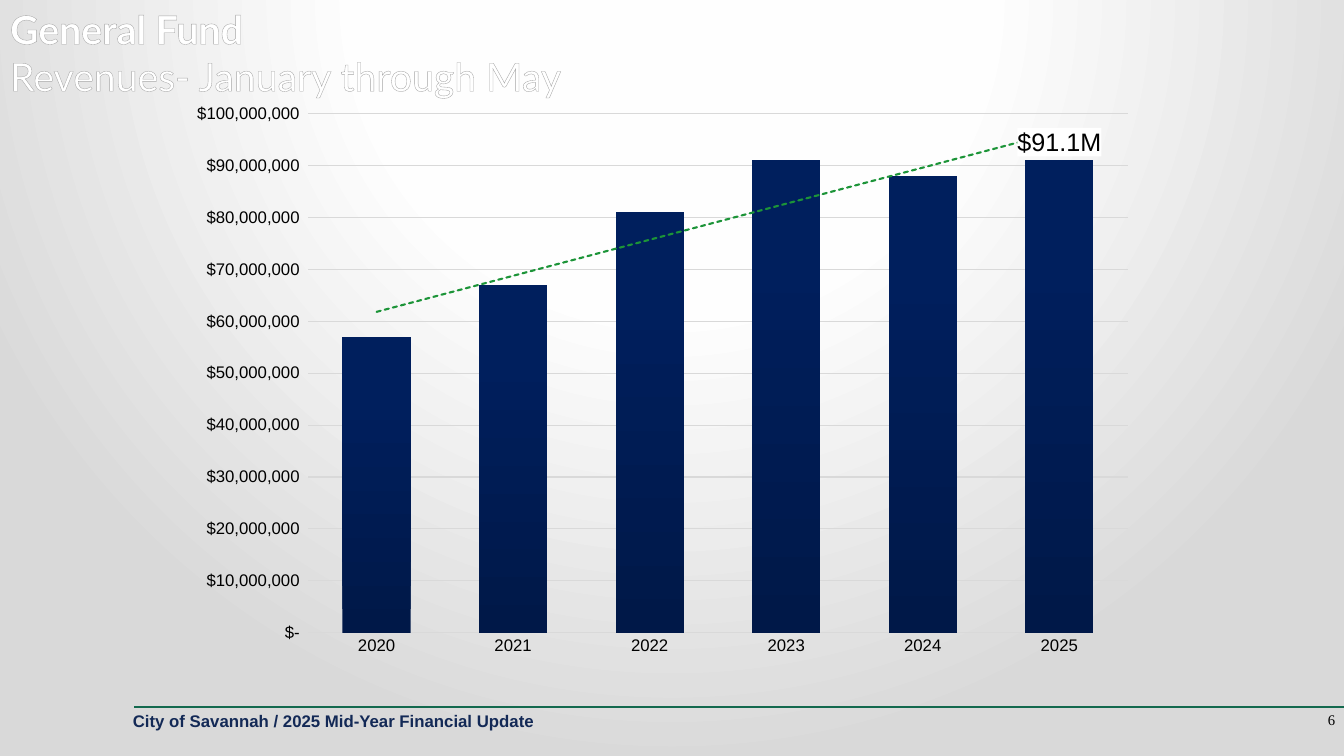
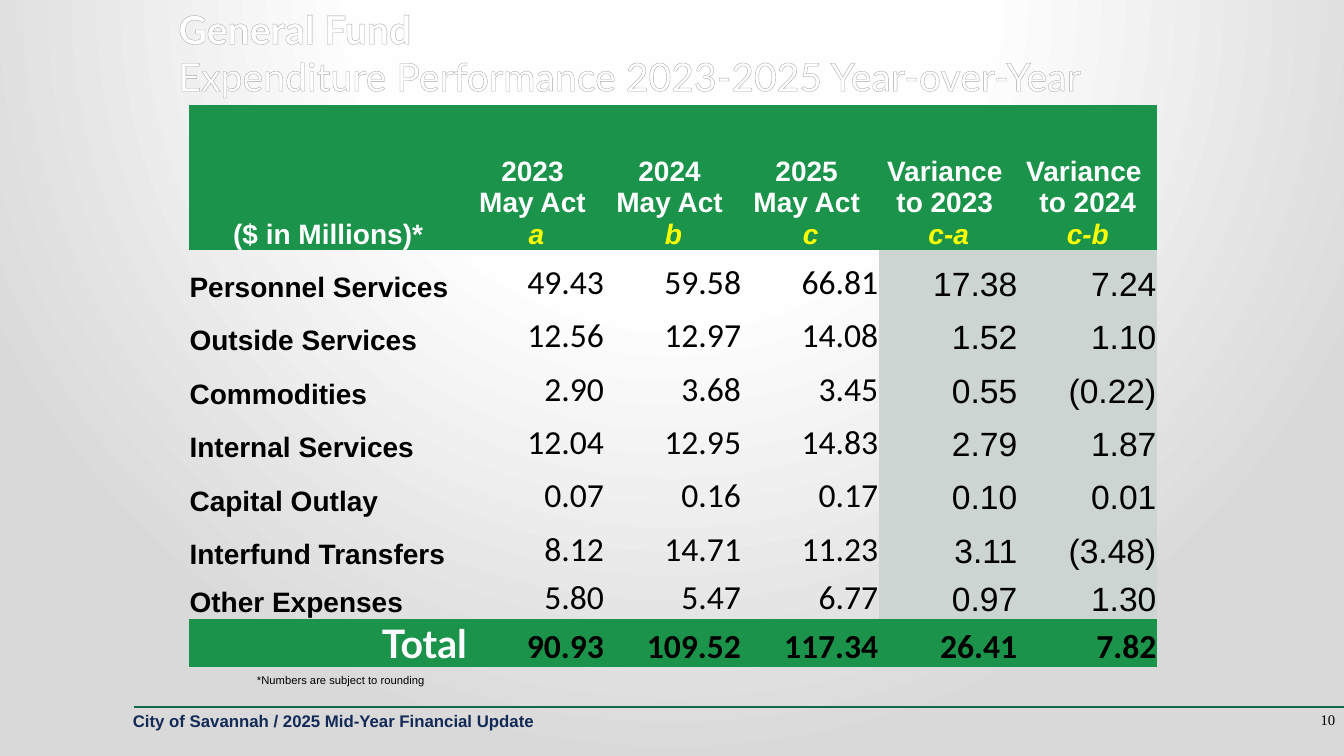
from pptx import Presentation
from pptx.chart.data import CategoryChartData
from pptx.dml.color import RGBColor
from pptx.enum.chart import XL_CHART_TYPE, XL_LABEL_POSITION, XL_TICK_MARK
from pptx.enum.shapes import MSO_CONNECTOR
from pptx.enum.text import MSO_ANCHOR, MSO_AUTO_SIZE, PP_ALIGN
from pptx.oxml import parse_xml
from pptx.oxml.ns import nsdecls, qn
from pptx.util import Inches, Pt

LEFT, MID, RIGHT = PP_ALIGN.LEFT, PP_ALIGN.CENTER, PP_ALIGN.RIGHT
TOP, LOW = MSO_ANCHOR.TOP, MSO_ANCHOR.BOTTOM
COLUMN = XL_CHART_TYPE.COLUMN_CLUSTERED
ABOVE = XL_LABEL_POSITION.OUTSIDE_END
NO_TICK = XL_TICK_MARK.NONE
NO_FIT = MSO_AUTO_SIZE.NONE
STRAIGHT = MSO_CONNECTOR.STRAIGHT

BLACK, WHITE, GRID = "000000", "FFFFFF", "D9D9D9"
GREEN, MIST, PINE, NAVY = "1B934B", "CCD5D1", "13694E", "132956"
NO_STYLE = "{2D5ABB26-0587-4C30-8999-92F81FD0307C}"
MONEY = '_("$"* #,##0_);_("$"* \\(#,##0\\);_("$"* "-"_);_(@_)'

TITLE = {"size": 28, "name": "Lato", "color": WHITE, "bold": True}
FOOTER = {"size": 12, "name": "Arial", "color": NAVY, "bold": True}
NUMBER = {"size": 10.5, "name": "Times New Roman", "color": BLACK}
NOTE = {"size": 8, "name": "Arial", "color": BLACK}
AXIS = {"size": 12, "name": "Arial", "color": BLACK, "bold": False}
TAG = {**AXIS, "size": 18}
HEAD = {"size": 20, "name": "Arial", "color": WHITE, "bold": True}
KEY = {**HEAD, "color": "FFFF00", "italic": True}
LABEL = {**HEAD, "color": BLACK}
ACTUAL = {"size": 24, "name": "Calibri", "color": BLACK, "bold": False}
CHANGE = {**ACTUAL, "name": "Arial"}
SUM = {**ACTUAL, "bold": True}

YEARS = ["2020", "2021", "2022", "2023", "2024", "2025"]
FUNDS = [57_000_000, 67_000_000, 81_000_000, 91_000_000, 88_000_000, 91_000_000]
WIDTHS = [2.77] + [1.36] * 3 + [1.38] * 2
HEIGHTS = [1.44] + [0.53] * 6 + [0.48] * 2
HEADS = [
    ["($ in Millions)*"],
    ["2023 ", "May Act ", "a"],
    ["2024 ", "May Act ", "b"],
    ["2025 ", "May Act ", "c"],
    ["Variance ", "to 2023 ", "c-a"],
    ["Variance ", "to 2024", "c-b"],
]
COSTS = [
    ["Personnel Services", "49.43", "59.58", "66.81", "17.38", "7.24"],
    ["Outside Services", "12.56", "12.97", "14.08", "1.52", "1.10"],
    ["Commodities", "2.90", "3.68", "3.45", "0.55", "(0.22)"],
    ["Internal Services", "12.04", "12.95", "14.83", "2.79", "1.87"],
    ["Capital Outlay", "0.07", "0.16", "0.17", "0.10", "0.01"],
    ["Interfund Transfers", "8.12", "14.71", "11.23", "3.11", "(3.48)"],
    ["Other Expenses", "5.80", "5.47", "6.77", "0.97", "1.30"],
]
TOTAL = ["Total", "90.93", "109.52", "117.34", "26.41", "7.82"]


def tint(text):
    return RGBColor.from_string(text)


def box(*sizes):
    return [Inches(size) for size in sizes]


def style(font, form):
    for key, value in form.items():
        if key == "color":
            font.color.rgb = tint(value)
        else:
            setattr(font, key, Pt(value) if key == "size" else value)


def write(para, lines, align=LEFT):
    para.alignment = align
    for spot, (text, form) in enumerate(lines):
        if spot:
            para.add_line_break()
        run = para.add_run()
        run.text = text
        style(run.font, form)


def blend(fill, root, stops, tail):
    fill.solid()
    marks = "".join(
        f'<a:gs pos="{spot * 1000}"><a:srgbClr val="{color}"/></a:gs>'
        for spot, color in stops
    )
    old = root.find(".//" + qn("a:solidFill"))
    new = parse_xml(
        f'<a:gradFill {nsdecls("a")} rotWithShape="1">'
        f"<a:gsLst>{marks}</a:gsLst>{tail}</a:gradFill>"
    )
    old.getparent().replace(old, new)


def add_text(slide, place, text, form, align=LEFT):
    shape = slide.shapes.add_textbox(*box(*place))
    shape.text_frame.word_wrap = True
    write(shape.text_frame.paragraphs[0], [(text, form)], align)
    return shape


def add_rule(slide):
    rule = slide.shapes.add_connector(STRAIGHT, *box(1.33, 7.01, 13.33, 7.01))
    rule.line.color.rgb = tint(PINE)
    rule.line.width = Pt(1.5)
    rule.element.find(qn("p:spPr")).append(
        parse_xml(f'<a:effectLst {nsdecls("a")}/>')
    )
    return rule


def set_theme(deck, slide):
    master = deck.slide_master
    blend(
        master.background.fill,
        master.element.find(".//" + qn("p:bg")),
        [(0, WHITE), (40, "FEFEFE"), (100, GRID)],
        '<a:path path="circle"><a:fillToRect l="50000" t="-80000"'
        ' r="50000" b="180000"/></a:path>',
    )
    label = "City of Savannah / 2025 Mid-Year Financial Update"
    parts = [add_rule(slide), add_text(slide, (1.22, 7, 6.67, 0.5), label, FOOTER)]
    for code, part in enumerate(parts, 90):
        part.element.find(".//" + qn("p:cNvPr")).set("id", str(code))
        slide.slide_layout.element.cSld.spTree.append(part.element)


def set_title(slide, place, topic):
    title = slide.shapes.title
    title.left, title.top, title.width, title.height = box(*place)
    frame = title.text_frame
    frame.word_wrap = True
    frame.auto_size = NO_FIT
    frame.vertical_anchor = TOP
    lines = [("General Fund", TITLE), (topic, {**TITLE, "bold": False})]
    write(frame.paragraphs[0], lines)
    for props in title.element.iter(qn("a:rPr")):
        props.insert(0, parse_xml(
            f'<a:ln {nsdecls("a")} w="9525"><a:solidFill>'
            '<a:srgbClr val="A6A6A6"/></a:solidFill></a:ln>'
        ))


def add_page(slide, number):
    add_text(slide, (11.67, 7, 1.67, 0.5), number, NUMBER, RIGHT)


def set_axes(chart):
    for axis in (chart.category_axis, chart.value_axis):
        axis.major_tick_mark = axis.minor_tick_mark = NO_TICK
        style(axis.tick_labels.font, AXIS)
    value = chart.value_axis
    value.minimum_scale, value.maximum_scale = 0, 100_000_000
    value.major_unit = 10_000_000
    value.tick_labels.number_format = MONEY
    value.tick_labels.number_format_is_linked = False
    value.format.line.fill.background()
    for line in (value.major_gridlines.format.line, chart.category_axis.format.line):
        line.color.rgb = tint(GRID)
        line.width = Pt(0.75)


def set_plot(root):
    area = root.find(".//" + qn("c:plotArea"))
    for old in area.findall(qn("c:layout")):
        area.remove(old)
    spots = {"x": 0.117, "y": 0.024, "w": 0.85, "h": 0.904}
    modes = "".join(f'<c:{key}Mode val="edge"/>' for key in "xy")
    sizes = "".join(f'<c:{key} val="{size}"/>' for key, size in spots.items())
    area.insert(0, parse_xml(
        f'<c:layout {nsdecls("c")}><c:manualLayout>'
        f'<c:layoutTarget val="inner"/>{modes}{sizes}</c:manualLayout></c:layout>'
    ))


def add_trend(root):
    root.find(".//" + qn("c:ser")).find(qn("c:cat")).addprevious(parse_xml(
        f'<c:trendline {nsdecls("c", "a")}><c:spPr><a:ln w="19050" cap="rnd">'
        '<a:solidFill><a:srgbClr val="1C9438"/></a:solidFill>'
        '<a:prstDash val="sysDash"/></a:ln></c:spPr>'
        '<c:trendlineType val="linear"/><c:dispRSqr val="0"/>'
        '<c:dispEq val="0"/></c:trendline>'
    ))


def add_tag(series, root, spot, text):
    series.data_labels.show_value = False
    label = series.points[spot].data_label
    write(label.text_frame.paragraphs[0], [(text, TAG)], MID)
    label.position = ABOVE
    root.find(".//" + qn("c:dLbl")).find(qn("c:tx")).addnext(parse_xml(
        f'<c:spPr {nsdecls("c", "a")}><a:solidFill>'
        f'<a:srgbClr val="{WHITE}"/></a:solidFill></c:spPr>'
    ))


def add_bars(slide):
    data = CategoryChartData()
    data.categories = YEARS
    data.add_series("Series 1", FUNDS)
    chart = slide.shapes.add_chart(COLUMN, *box(1.91, 0.99, 9.59, 5.7), data).chart
    root = chart.element
    chart.has_legend = chart.has_title = False
    style(chart.font, {**AXIS, "size": 10})
    set_axes(chart)
    set_plot(root)
    plot = chart.plots[0]
    plot.gap_width, plot.overlap, plot.vary_by_categories = 100, -24, False
    series = plot.series[0]
    blend(
        series.format.fill,
        root.find(".//" + qn("c:ser")),
        [(0, "001848"), (80, "001F5D"), (100, "001F5D")],
        '<a:lin ang="16200000" scaled="0"/>',
    )
    add_tag(series, root, 5, "$91.1M")
    add_trend(root)


def set_cell(cell, lines, align, color=None):
    cell.margin_left = cell.margin_top = cell.margin_right = Inches(0.01)
    cell.margin_bottom = 0
    cell.vertical_anchor = LOW
    write(cell.text_frame.paragraphs[0], lines, align)
    if color:
        cell.fill.solid()
        cell.fill.fore_color.rgb = tint(color)
    else:
        cell.fill.background()


def add_costs(slide):
    frame = slide.shapes.add_table(
        len(HEIGHTS), len(WIDTHS), *box(1.87, 1.04, sum(WIDTHS), sum(HEIGHTS))
    )
    frame.element.find(".//" + qn("a:tableStyleId")).text = NO_STYLE
    table = frame.table
    table.first_row = table.horz_banding = False
    for col, width in zip(table.columns, WIDTHS):
        col.width = Inches(width)
    for row, height in zip(table.rows, HEIGHTS):
        row.height = Inches(height)
    for col, texts in enumerate(HEADS):
        lines = [(text, KEY if spot == 2 else HEAD) for spot, text in enumerate(texts)]
        set_cell(table.cell(0, col), lines, MID, GREEN)
    forms = [LABEL] + [ACTUAL] * 3 + [CHANGE] * 2
    for row, texts in enumerate(COSTS, 1):
        for col, text in enumerate(texts):
            set_cell(
                table.cell(row, col),
                [(text, forms[col])],
                RIGHT if col else LEFT,
                MIST if col > 3 else None,
            )
    for col, text in enumerate(TOTAL):
        form = SUM if col else TITLE
        set_cell(table.cell(len(COSTS) + 1, col), [(text, form)], RIGHT, GREEN)


def main():
    deck = Presentation()
    deck.slide_width, deck.slide_height = box(13.33, 7.5)
    layout = deck.slide_layouts[5]

    slide = deck.slides.add_slide(layout)
    set_theme(deck, slide)
    set_title(slide, (0, 0, 13.33, 0.92), "Revenues- January through May")
    add_page(slide, "6")
    add_bars(slide)

    slide = deck.slides.add_slide(layout)
    topic = "Expenditure Performance 2023-2025 Year-over-Year"
    set_title(slide, (1.67, 0, 10, 0.92), topic)
    add_page(slide, "10")
    add_costs(slide)
    note = "*Numbers are subject to rounding"
    add_text(slide, (2.45, 6.63, 6.39, 0.24), note, NOTE)

    deck.save("out.pptx")


if __name__ == "__main__":
    main()
